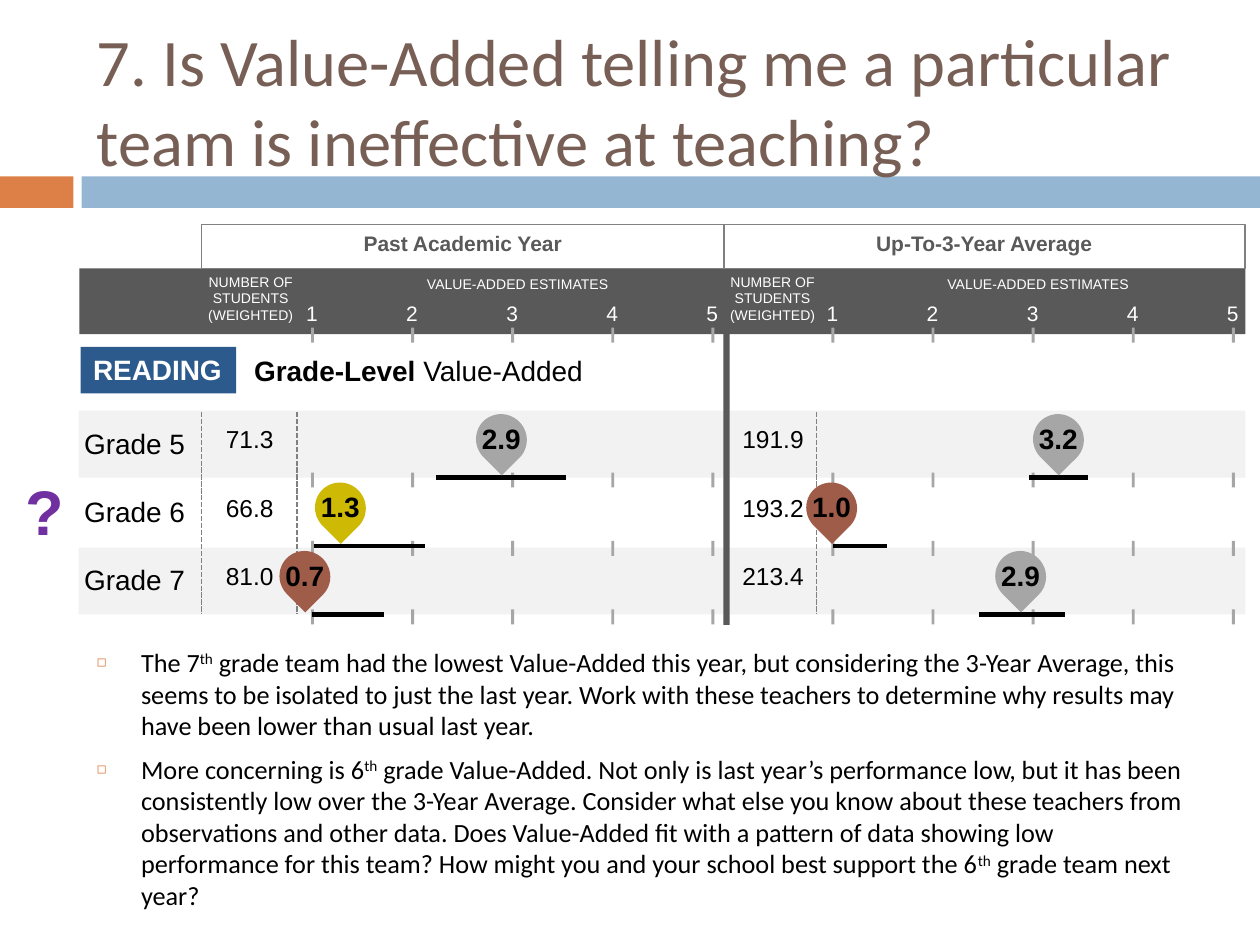
"""Build the slide on grade-level value-added estimates."""
from dataclasses import dataclass

from lxml.etree import SubElement
from pptx import Presentation
from pptx.dml.color import RGBColor as RGB
from pptx.enum.dml import MSO_LINE_DASH_STYLE as Dash
from pptx.enum.shapes import MSO_CONNECTOR as Conn, MSO_SHAPE as Shape
from pptx.enum.text import MSO_ANCHOR as Anchor, MSO_AUTO_SIZE as Fit, PP_ALIGN as Align
from pptx.oxml.ns import qn
from pptx.util import Pt


@dataclass(frozen=True)
class Theme:
    orange: str = "DD8047"
    blue: str = "94B6D2"
    navy: str = "2C5A8C"
    brown: str = "775F55"
    purple: str = "7030A0"
    dark: str = "595959"
    rule: str = "808080"
    gray: str = "A6A6A6"
    stripe: str = "F2F2F2"
    yellow: str = "CEB904"
    red: str = "9F5C49"
    white: str = "FFFFFF"
    black: str = "000000"
    sans: str = "Arial"
    text: str = "Calibri"
    tiny: int = 8
    small: int = 12
    value: int = 14
    body: int = 15
    label: int = 16
    mark: int = 36
    title: int = 38


T = Theme()
ROW_PITCH = 39.1
TICK_STEP = 57.2
PANELS = [178.6, 476]
TITLE = "7. Is Value-Added telling me a particular team is ineffective at teaching?"
HEADERS = [("Past Academic Year", 115.2, 298.6), ("Up-To-3-Year Average", 413.4, 298)]
GRADES = [
    ("Grade 5", [("71.3", "2.9", T.gray, 286.5, 249.1, 323.3),
                 ("191.9", "3.2", T.gray, 604.8, 588.3, 621.9)]),
    ("Grade 6", [("66.8", "1.3", T.yellow, 194.5, 179.2, 242.7),
                 ("193.2", "1.0", T.red, 475.2, 475.9, 506.8)]),
    ("Grade 7", [("81.0", "0.7", T.red, 174.2, 178.5, 219.4),
                 ("213.4", "2.9", T.gray, 583.2, 559.4, 608.4)]),
]
POINTS = [
    "The 7^th^ grade team had the lowest Value-Added this year, but considering the "
    "3-Year Average, this seems to be isolated to just the last year. Work with these "
    "teachers to determine why results may have been lower than usual last year.",
    "More concerning is 6^th^ grade Value-Added. Not only is last year’s performance low, "
    "but it has been consistently low over the 3-Year Average. Consider what else you know "
    "about these teachers from observations and other data. Does Value-Added fit with a "
    "pattern of data showing low performance for this team? How might you and your school "
    "best support the 6^th^ grade team next year?",
]


def set_all(obj, values):
    """Set each attribute named in values."""
    for name, value in values.items():
        setattr(obj, name, value)


def style(font, size, color, name=T.sans, bold=False):
    """Format a font."""
    set_all(font, {"size": Pt(size), "name": name, "bold": bold})
    font.color.rgb = RGB.from_string(color)


def add_box(s, x, y, w, h, fill=None, line=None, shape=Shape.RECTANGLE):
    """Add a preset shape with a flat fill and an optional outline."""
    sp = s.shapes.add_shape(shape, Pt(x), Pt(y), Pt(w), Pt(h))
    sp.shadow.inherit = False
    if fill:
        sp.fill.solid()
        sp.fill.fore_color.rgb = RGB.from_string(fill)
    else:
        sp.fill.background()
    if line:
        sp.line.color.rgb = RGB.from_string(line)
        sp.line.width = Pt(1)
    else:
        sp.line.fill.background()
    return sp


def write(sp, text, size, color, align=Align.CENTER, bold=False, wrap=False):
    """Put single-style text in a shape."""
    tf = sp.text_frame
    tf.text = text
    set_all(tf, {"word_wrap": wrap, "auto_size": Fit.SHAPE_TO_FIT_TEXT,
                 "vertical_anchor": Anchor.TOP})
    for p in tf.paragraphs:
        p.alignment = align
        for r in p.runs:
            style(r.font, size, color, bold=bold)
    return tf


def add_text(s, x, y, w, h, *args, **kwargs):
    """Add a text box that keeps its lines unwrapped."""
    sp = s.shapes.add_textbox(Pt(x), Pt(y), Pt(w), Pt(h))
    return write(sp, *args, **kwargs)


def add_line(s, x1, y1, x2, y2, color, width, dash=None):
    """Add a straight line."""
    ln = s.shapes.add_connector(Conn.STRAIGHT, Pt(x1), Pt(y1), Pt(x2), Pt(y2))
    ln.line.color.rgb = RGB.from_string(color)
    set_all(ln.line, {"width": Pt(width), "dash_style": dash})
    SubElement(ln._element.spPr, qn("a:effectLst"))


def add_ticks(s, y):
    """Add one row of scale ticks across both panels."""
    for x0 in PANELS:
        for i in range(5):
            add_box(s, x0 + i * TICK_STEP - 0.85, y, 1.7, 8.6, T.gray)


def add_header(s):
    """Add the header band with its column titles and scale numbers."""
    add_box(s, 45.4, 153.4, 666.3, 37.6, T.dark)
    for (name, x, w), x0 in zip(HEADERS, PANELS):
        tf = write(add_box(s, x, 128.2, w, 25.2, line=T.rule), name, T.small, T.dark,
                   bold=True, wrap=True)
        tf.margin_bottom = Pt(7.2)
        add_text(s, x - 3.6, 152.6, 63.4, 36, "NUMBER OF\nSTUDENTS\n(WEIGHTED)",
                 T.tiny, T.white)
        add_text(s, x0 + 57.2, 154.1, 120.2, 17.3, "VALUE-ADDED ESTIMATES", T.tiny, T.white)
        for i in range(5):
            add_text(s, x0 + i * TICK_STEP - 10.8, 168.4, 20.9, 21.6, str(i + 1),
                     T.small, T.white)


def add_grid(s):
    """Add the row stripes, ticks, divider and dashed column rules."""
    for row in (0, 2):
        add_box(s, 45, 234.7 + row * ROW_PITCH, 666.7, 38.2, T.stripe)
    add_ticks(s, 187.2)
    for row in range(len(GRADES)):
        add_ticks(s, 270 + row * ROW_PITCH)
    add_box(s, 413.3, 190.1, 3.6, 167, T.dark)
    for x in (115.2, 169.9, 466.6):
        add_line(s, x, 235.4, x, 350.6, T.rule, 1, Dash.SQUARE_DOT)


def add_estimate(s, row, estimate, color, x, low, high):
    """Add a pin with its estimate and confidence interval."""
    dy = row * ROW_PITCH
    add_line(s, low, 272.9 + dy, high, 272.9 + dy, T.black, 2.5)
    pin = add_box(s, x - 14.4, 236.5 + dy, 28.8, 29.3, color, shape=Shape.TEAR)
    pin.rotation = 135
    add_text(s, x - 18.4, 237.3 + dy, 36.8, 26.6, estimate, T.label, T.black, bold=True)


def add_grade(s, row, grade, cells):
    """Add one grade row with its student numbers and estimates."""
    y = 239 + row * ROW_PITCH
    add_text(s, 41, y + 1, 72.7, 26.6, grade, T.label, T.black, Align.LEFT)
    for (count, *estimate), x, w in zip(cells, (121.7, 416.9), (42, 49.7)):
        add_text(s, x, y, w, 24.5, count, T.value, T.black)
        add_estimate(s, row, *estimate)


def place(s, sp, x, y, w, h):
    """Move a placeholder and bring it to the front."""
    set_all(sp, {"left": Pt(x), "top": Pt(y), "width": Pt(w), "height": Pt(h)})
    s.shapes._spTree.append(sp._element)
    set_all(sp.text_frame, {"word_wrap": True, "auto_size": Fit.NONE})
    return sp.text_frame


def add_title(s):
    """Fill the title placeholder."""
    tf = place(s, s.shapes.title, 48.2, 18, 642.2, 77.8)
    tf.text = TITLE
    tf.vertical_anchor = Anchor.MIDDLE
    p = tf.paragraphs[0]
    p.alignment = Align.LEFT
    style(p.runs[0].font, T.title, T.brown, T.text)


def add_bullet(p):
    """Give a paragraph a small square bullet and a hanging indent."""
    pPr = p._p.get_or_add_pPr()
    set_all(p, {"space_before": Pt(0)})
    pPr.set("marL", str(Pt(25.2)))
    pPr.set("indent", str(Pt(-25.2)))
    SubElement(SubElement(pPr, qn("a:buClr")), qn("a:srgbClr"), val=T.orange)
    SubElement(pPr, qn("a:buSzPct"), val="60000")
    SubElement(pPr, qn("a:buChar"), char="◻")


def add_points(s):
    """Fill the body placeholder; carets enclose superscripts."""
    tf = place(s, s.placeholders[1], 48.2, 365.8, 642.2, 143.3)
    for i, point in enumerate(POINTS):
        p = tf.add_paragraph() if i else tf.paragraphs[0]
        add_bullet(p)
        p.space_before = Pt(7 if i else 0)
        for j, part in enumerate(point.split("^")):
            r = p.add_run()
            r.text = part
            style(r.font, T.body, T.black, T.text)
            if j % 2:
                r._r.get_or_add_rPr().set("baseline", "30000")


def main():
    """Build and save the slide."""
    prs = Presentation()
    set_all(prs, {"slide_width": Pt(720), "slide_height": Pt(540)})
    s = prs.slides.add_slide(prs.slide_layouts[1])
    add_box(s, 0, 100.8, 42, 18, T.orange)
    add_box(s, 46.6, 100.8, 673.4, 18, T.blue)
    add_header(s)
    add_grid(s)
    write(add_box(s, 46.1, 198.2, 88.8, 26.6, T.navy), "READING", T.label, T.white,
          Align.LEFT, bold=True)
    tf = add_text(s, 138.2, 198.7, 204.5, 26.6, "Grade-Level", T.label, T.black,
                  Align.LEFT, bold=True)
    r = tf.paragraphs[0].add_run()
    r.text = " Value-Added"
    style(r.font, T.label, T.black)
    for row, (grade, cells) in enumerate(GRADES):
        add_grade(s, row, grade, cells)
    add_title(s)
    add_points(s)
    add_text(s, 7.2, 266.4, 36.7, 51.1, "?", T.mark, T.purple, Align.LEFT, bold=True)
    prs.save("out.pptx")


if __name__ == "__main__":
    main()
